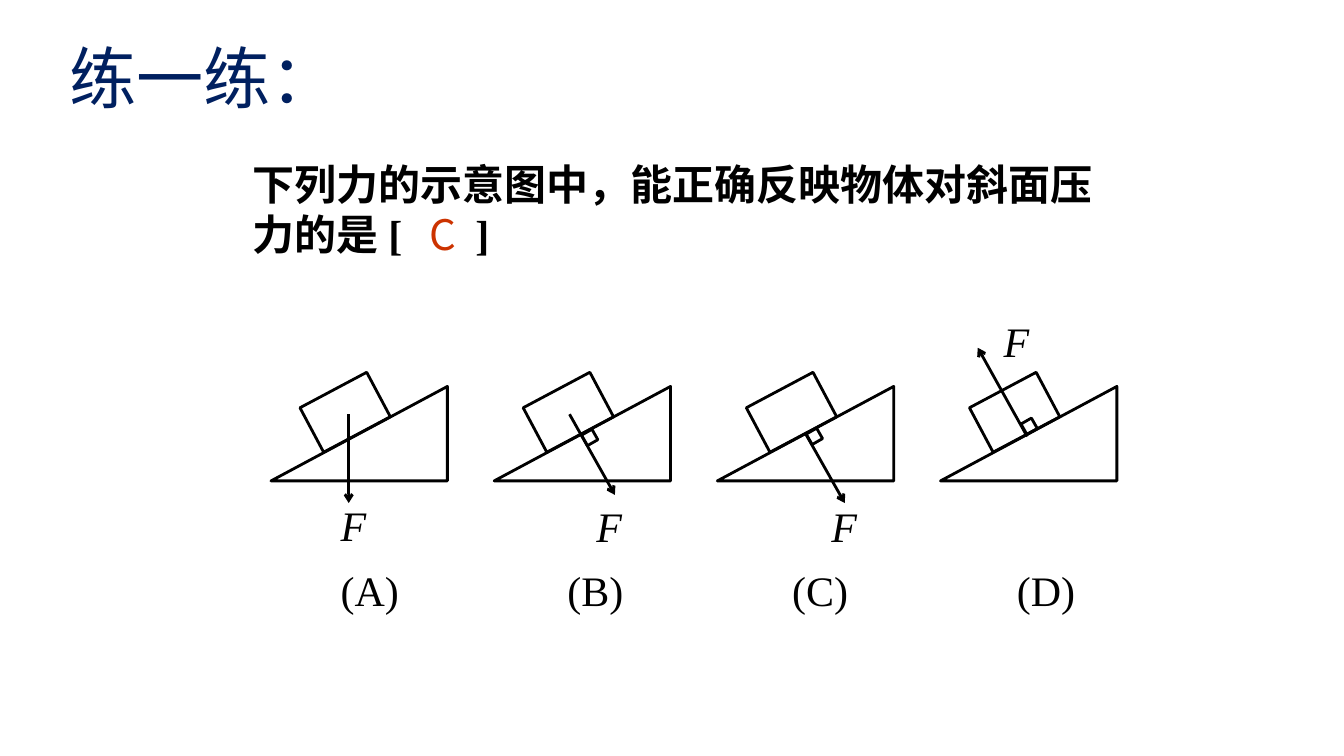
"""Build a practice slide about the pressure of a block on an incline."""
import lxml.etree
import pptx
import pptx.dml.color
import pptx.enum.shapes
import pptx.enum.text
import pptx.oxml.ns
import pptx.util

Pt = pptx.util.Pt
MSO = pptx.enum.shapes.MSO_SHAPE
qn = pptx.oxml.ns.qn


def rgb(value):
    return pptx.dml.color.RGBColor.from_string(value)


def add_text(box, text, size=30, font="Times New Roman", color="000000",
             bold=False, italic=False, wrap=True):
    sp = s.shapes.add_textbox(*map(Pt, box))
    tf = sp.text_frame
    tf.word_wrap = wrap
    tf.auto_size = pptx.enum.text.MSO_AUTO_SIZE.SHAPE_TO_FIT_TEXT
    r = tf.paragraphs[0].add_run()
    r.text = text
    r.font.size = Pt(size)
    r.font.name = font
    r.font.bold = bold
    r.font.italic = italic
    r.font.color.rgb = rgb(color)
    east_asian = lxml.etree.SubElement(r.font._element, qn("a:ea"))
    east_asian.set("typeface", "Noto Sans CJK SC")
    return tf


prs = pptx.Presentation()
prs.slide_width, prs.slide_height = Pt(960), Pt(540)
s = prs.slides.add_slide(prs.slide_layouts[6])

title = add_text((42.5, 22.3, 250, 65.5), "练一练：", 48, "Arial", "002060")
title.vertical_anchor = pptx.enum.text.MSO_ANCHOR.MIDDLE

question = add_text((173.5, 109.4, 624.2, 80),
                    "下列力的示意图中，能正确反映物体对斜面压力的是 [\t]", bold=True)
tabs = lxml.etree.SubElement(question.paragraphs[0]._p.get_or_add_pPr(), qn("a:tabLst"))
tab = lxml.etree.SubElement(tabs, qn("a:tab"))
tab.set("pos", str(Pt(159)))
tab.set("algn", "l")
add_text((299.5, 145.4, 39.6, 43.2), "C", font="Noto Sans CJK SC", color="CC3300")

# name, name left, force start, force end, F position, right-angle mark position
options = [
    ("(A)", 236.2, (249.1, 295.9), (249.1, 359.3), (236.2, 353.5), None),
    ("(B)", 398.2, (406.8, 295.9), (439.2, 353.5), (419, 354.2), (416.9, 308.2)),
    ("(C)", 558.7, (575.3, 309.6), (603.4, 359.3), (586.8, 354.2), (577.4, 307.4)),
    ("(D)", 719.3, (733.7, 311.8), (698.4, 248.4), (709.9, 221.8), (730.8, 300.2)),
]
for i, (name, name_left, start, end, f_at, mark_at) in enumerate(options):
    left = 193.6 + 159.4 * i
    outlines = [
        (MSO.RIGHT_TRIANGLE, (left, 276, 126, 67.5), 0),
        (MSO.RECTANGLE, (left + 26, 276.5, 54, 36), 332),
    ]
    if mark_at:
        outlines.append((MSO.RECTANGLE, (*mark_at, 8.6, 8.6), 60.4))
    for kind, box, angle in outlines:
        sp = s.shapes.add_shape(kind, *map(Pt, box))
        sp.rotation = angle
        sp.shadow.inherit = False
        sp.fill.background()
        sp.line.color.rgb = rgb("000000")
        sp.line.width = Pt(2)
        if kind == MSO.RIGHT_TRIANGLE:
            sp._element.spPr.find(qn("a:xfrm")).set("flipH", "1")

    force = s.shapes.add_connector(pptx.enum.shapes.MSO_CONNECTOR.STRAIGHT,
                                   *map(Pt, start + end))
    force.line.color.rgb = rgb("000000")
    force.line.width = Pt(2)
    head = lxml.etree.SubElement(force.line._get_or_add_ln(), qn("a:tailEnd"))
    head.set("type", "arrow")
    lxml.etree.SubElement(force._element.spPr, qn("a:effectLst"))

    add_text((*f_at, 31, 43.2), "F", italic=True)
    add_text((name_left, 399.6, 56, 43.2), name, wrap=False)

prs.save("out.pptx")
